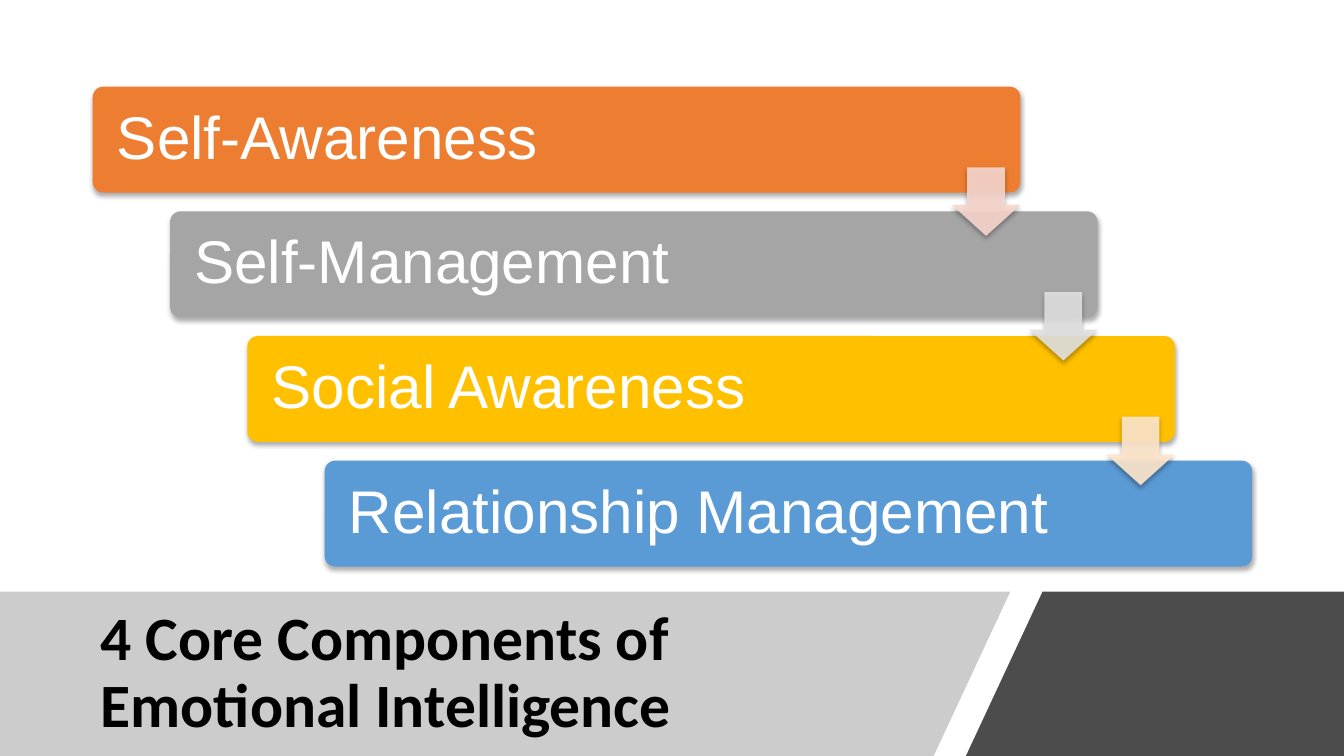
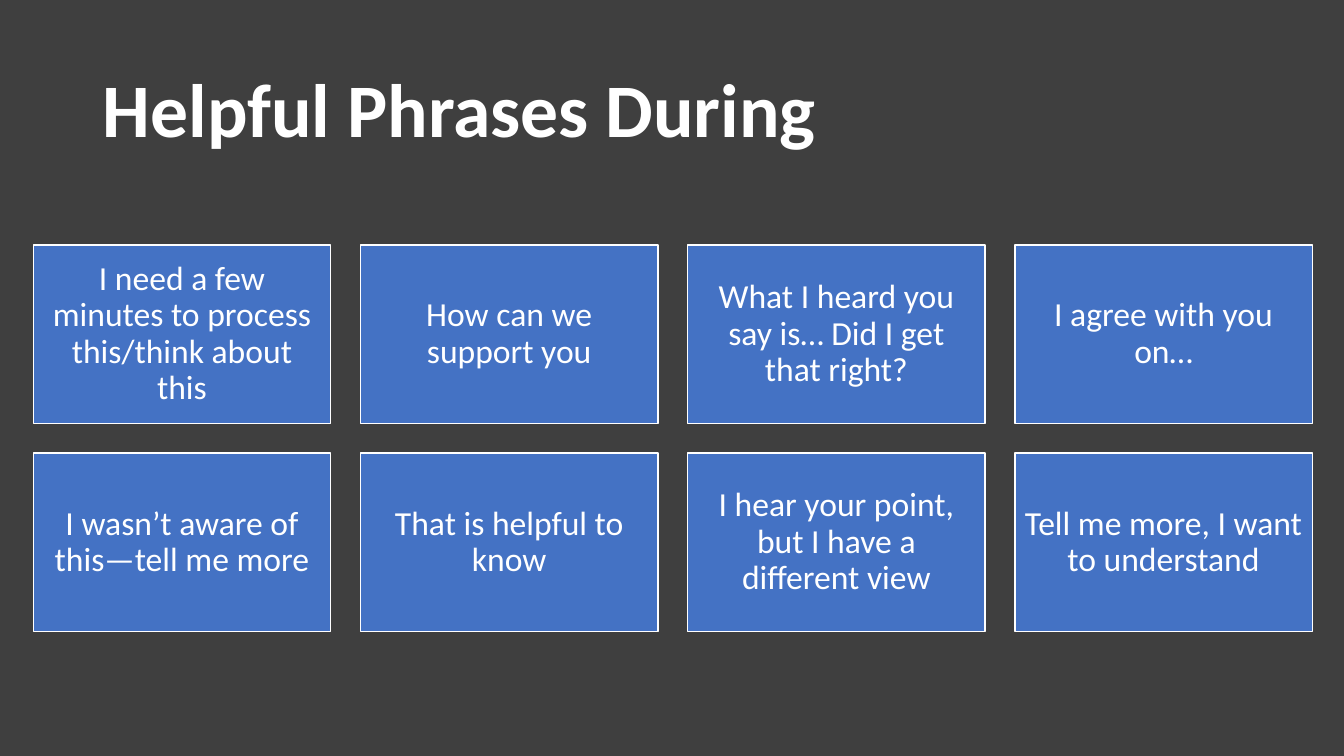
"""Builds two slides: the emotional intelligence steps and a grid of helpful phrases."""
from lxml import etree
from pptx import Presentation
from pptx import util as u
from pptx.dml.color import RGBColor
from pptx.enum import shapes, text
from pptx.oxml import ns

WIDTH, HEIGHT = 13.33, 7.5
WHITE = RGBColor(0xFF, 0xFF, 0xFF)
BLACK = RGBColor(0x00, 0x00, 0x00)
GRAY = RGBColor(0x80, 0x80, 0x80)
CHARCOAL = RGBColor(0x3F, 0x3F, 0x3F)
BLUE = RGBColor(0x44, 0x72, 0xC4)

STEPS_TITLE = "4 Core Components of Emotional Intelligence"
STEPS = [
    ("Self-Awareness", RGBColor(0xED, 0x7D, 0x31), RGBColor(0xF8, 0xD7, 0xCE)),
    ("Self-Management", RGBColor(0xA5, 0xA5, 0xA5), RGBColor(0xE1, 0xE1, 0xE1)),
    ("Social Awareness", RGBColor(0xFF, 0xC0, 0x00), RGBColor(0xFF, 0xE8, 0xCC)),
    ("Relationship Management", RGBColor(0x5B, 0x9B, 0xD5), None),
]
BAR_LEFT, BAR_TOP, BAR_WIDTH, BAR_HEIGHT = 0.92, 0.86, 9.2, 1.05
STEP_RIGHT, STEP_DOWN = 2.3 / 3, 3.71 / 3
ARROW_SIZE, ARROW_DROP = 0.68, 0.8

BAND_TOP = 5.87
BANDS = [
    ([(0, BAND_TOP), (10.02, BAND_TOP), (9.26, HEIGHT), (0, HEIGHT)], GRAY, 40),
    ([(10.34, BAND_TOP), (WIDTH, BAND_TOP), (WIDTH, HEIGHT), (9.58, HEIGHT)], BLACK, 70),
]

PHRASES_TITLE = "Helpful Phrases During"
PHRASES = [
    "I need a few minutes to process this/think about this",
    "How can we support you",
    "What I heard you say is… Did I get that right?",
    "I agree with you on…",
    "I wasn’t aware of this—tell me more",
    "That is helpful to know",
    "I hear your point, but I have a different view",
    "Tell me more, I want to understand",
]
COLUMNS = 4
CARD_LEFT, CARD_TOP, CARD_WIDTH, CARD_HEIGHT = 0.33, 2.43, 2.95, 1.77
CARD_GAP = CARD_WIDTH / 10


def write(shape, words, size, color=WHITE, font="Calibri", bold=False,
          align=text.PP_ALIGN.LEFT, insets=(0.1, 0.1)):
    """Put one formatted paragraph, centred vertically, into a shape."""
    frame = shape.text_frame
    frame.word_wrap = True
    frame.auto_size = text.MSO_AUTO_SIZE.NONE
    frame.vertical_anchor = text.MSO_ANCHOR.MIDDLE
    frame.margin_left = frame.margin_right = u.Inches(insets[0])
    frame.margin_top = frame.margin_bottom = u.Inches(insets[1])
    frame.text = words
    paragraph = frame.paragraphs[0]
    paragraph.alignment = align
    paragraph.line_spacing = 0.9
    paragraph.font.size = u.Pt(size)
    paragraph.font.name = font
    paragraph.font.bold = bold
    paragraph.font.color.rgb = color


def paint(shape, color, opacity=100, line=None):
    """Give a shape a flat fill and an optional thin outline."""
    shape.shadow.inherit = False
    shape.fill.solid()
    shape.fill.fore_color.rgb = color
    if opacity < 100:
        solid = shape.element.spPr.find(ns.qn("a:solidFill"))
        etree.SubElement(solid[0], ns.qn("a:alpha"), val=str(opacity * 1000))
    if line is None:
        shape.line.fill.background()
    else:
        shape.line.color.rgb = line
        shape.line.width = u.Pt(1)


def add_block(slide, kind, box, color, **look):
    """Add a painted preset shape at a box given in inches."""
    shape = slide.shapes.add_shape(kind, *map(u.Inches, box))
    paint(shape, color, **look)
    return shape


def cast_shadow(shape):
    """Add a soft shadow below a shape."""
    effects = shape.element.spPr.find(ns.qn("a:effectLst"))
    shadow = etree.SubElement(effects, ns.qn("a:outerShdw"), blurRad=str(u.Pt(3.5)),
                              dist=str(u.Pt(2.2)), dir="5400000", algn="ctr", rotWithShape="0")
    color = etree.SubElement(shadow, ns.qn("a:srgbClr"), val=str(BLACK))
    etree.SubElement(color, ns.qn("a:alpha"), val="32000")


def add_slide(presentation, background, title, box, size, color):
    """Add a title-only slide with its background and bold title."""
    slide = presentation.slides.add_slide(presentation.slide_layouts[5])
    slide.background.fill.solid()
    slide.background.fill.fore_color.rgb = background
    holder = slide.shapes.title
    holder.left, holder.top, holder.width, holder.height = map(u.Inches, box)
    write(holder, title, size, color, bold=True, insets=(0.1, 0.05))
    return slide


def build_steps(presentation):
    """Build the staircase of bars above the two bands."""
    slide = add_slide(presentation, WHITE, STEPS_TITLE, (0.9, 5.96, 8.44, 1.45), 44, BLACK)
    for points, color, opacity in BANDS:
        corners = [(u.Inches(x), u.Inches(y)) for x, y in points]
        builder = slide.shapes.build_freeform(*corners[0])
        builder.add_line_segments(corners[1:])
        paint(builder.convert_to_shape(), color, opacity)
    title = slide.shapes.title.element
    title.getparent().append(title)

    places = [(BAR_LEFT + i * STEP_RIGHT, BAR_TOP + i * STEP_DOWN) for i in range(len(STEPS))]
    for (label, color, _), (left, top) in zip(STEPS, places):
        bar = add_block(slide, shapes.MSO_SHAPE.ROUNDED_RECTANGLE,
                        (left, top, BAR_WIDTH, BAR_HEIGHT), color)
        bar.adjustments[0] = 0.1
        cast_shadow(bar)
        write(bar, label, 43, font="Arial", insets=(0.21, 0.18))
    for (_, _, color), (left, top) in zip(STEPS[:-1], places):
        arrow = add_block(slide, shapes.MSO_SHAPE.DOWN_ARROW,
                          (left + BAR_WIDTH - ARROW_SIZE, top + ARROW_DROP, ARROW_SIZE, ARROW_SIZE),
                          color, opacity=90)
        arrow.adjustments[0], arrow.adjustments[1] = 0.55, 0.45
        cast_shadow(arrow)


def build_phrases(presentation):
    """Build the grid of phrase cards."""
    slide = add_slide(presentation, CHARCOAL, PHRASES_TITLE, (0.92, 0.4, 12.06, 1.45), 54, WHITE)
    for index, phrase in enumerate(PHRASES):
        row, column = divmod(index, COLUMNS)
        box = (CARD_LEFT + column * (CARD_WIDTH + CARD_GAP),
               CARD_TOP + row * (CARD_HEIGHT + CARD_GAP), CARD_WIDTH, CARD_HEIGHT)
        card = add_block(slide, shapes.MSO_SHAPE.RECTANGLE, box, BLUE, line=WHITE)
        write(card, phrase, 24, align=text.PP_ALIGN.CENTER, insets=(0.1, 0.1))


def main():
    """Build and save the presentation."""
    presentation = Presentation()
    presentation.slide_width = u.Inches(WIDTH)
    presentation.slide_height = u.Inches(HEIGHT)
    build_steps(presentation)
    build_phrases(presentation)
    presentation.save("out.pptx")


if __name__ == "__main__":
    main()
